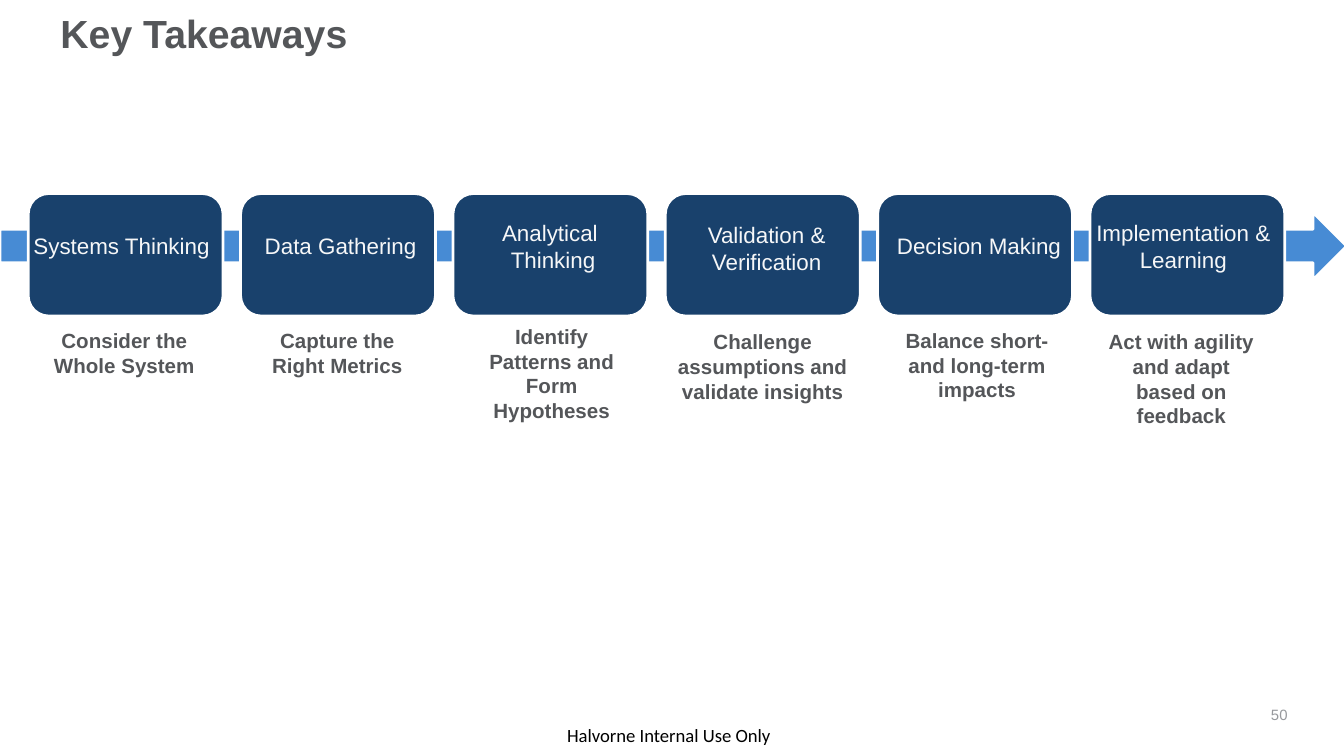
from pptx import Presentation
from pptx import util as u
from pptx.dml.color import RGBColor
from pptx.enum import shapes, text

HUES = {"navy": "19416C", "blue": "478BD4", "white": "FFFFFF", "pale": "F6F7F8",
        "slate": "545659", "grey": "97999D", "black": "000000"}
WIDE = 10
HIGH = WIDE * 9 / 16
COL, ROW = WIDE / 100, HIGH / 100
PITCH, CARD, TALL = 15.8, 14.5, 16.2
STEPS = [
    (["Systems Thinking"], 1, (-1.3, 0), "Consider the Whole System", (-0.1, 16.9, 14.5, 19.2)),
    (["Data Gathering"], 1, (-0.8, 0), "Capture the Right Metrics", (0, 16.9, 14.4, 11.7)),
    (["Analytical ", "Thinking"], 2, (-0.8, 0), "Identify Patterns and Form Hypotheses",
     (0.5, 16.4, 13.7, 18.3)),
    (["Validation & Verification"], 2, (-0.7, 0.3),
     "Challenge assumptions and validate insights", (-0.1, 17.1, 14.7, 18.3)),
    (["Decision Making"], 1, (-0.7, 0), "Balance short- and long-term impacts",
     (-0.4, 16.9, 15.6, 21.5)),
    (["Implementation & Learning"], 2, (-1.3, 0), "Act with agility and adapt based on feedback",
     (-0.2, 17.1, 14, 24.9)),
]


def hue(name):
    return RGBColor.from_string(HUES[name])


def spot(box):
    x, y, w, h = box
    return [u.Inches(n) for n in (x * COL, y * ROW, w * COL, h * ROW)]


def write(slide, box, lines, size=12, color="slate", font="Arial", bold=False,
          align="CENTER", anchor="TOP", pad=(0.1, 0.05), space=None, wrap=True):
    frame = slide.shapes.add_textbox(*spot(box)).text_frame
    frame.word_wrap = wrap
    frame.vertical_anchor = text.MSO_ANCHOR[anchor]
    frame.margin_left = frame.margin_right = u.Inches(pad[0])
    frame.margin_top = frame.margin_bottom = u.Inches(pad[1])
    for i, line in enumerate(lines):
        para = frame.paragraphs[0] if i == 0 else frame.add_paragraph()
        para.alignment = text.PP_ALIGN[align]
        if space:
            para.line_spacing = space
        run = para.add_run()
        run.text = line
        run.font.size, run.font.name, run.font.bold = u.Pt(size), font, bold
        run.font.color.rgb = hue(color)


def block(slide, kind, box, fill):
    shape = slide.shapes.add_shape(kind, *spot(box))
    shape.shadow.inherit = False
    shape.fill.solid()
    shape.fill.fore_color.rgb = hue(fill)
    shape.line.color.rgb = hue("white")
    shape.line.width = u.Pt(1.5)


def head(slide, box):
    write(slide, box, ["Key Takeaways"], size=21, bold=True, align="LEFT",
          pad=(0, 0.05), space=0.9)


def flow(slide, box):
    left, top, wide, high = box
    block(slide, shapes.MSO_SHAPE.RIGHT_ARROW, (left, top + 2.5, wide, 8.9), "blue")
    lefts = [left + 2.1 + PITCH * i for i in range(len(STEPS))]
    for x in lefts:
        block(slide, shapes.MSO_SHAPE.ROUNDED_RECTANGLE, (x, top, CARD, high), "navy")
    for x, (label, rows, (right, down), note, area) in zip(lefts, STEPS):
        deep = 1.8 + 3.55 * rows
        write(slide, (x + right, top + 6.95 + down - deep / 2, 16.5, deep), label, color="pale")
        dx, dy, w, h = area
        write(slide, (x + dx, top + dy, w, h), [note], size=11, bold=True)


def foot(slide, box):
    left, top, wide, high = box
    write(slide, (left + 42.2, top + 3.4, 15.8, 3), ["Halvorne Internal Use Only"], size=10,
          color="black", font="Calibri", align="LEFT", pad=(0, 0), wrap=False)
    write(slide, (left + wide - 6.1, top, 1.9, high), ["50"], size=8, color="grey",
          align="RIGHT", pad=(0, 0.05))


def main():
    deck = Presentation()
    deck.slide_width, deck.slide_height = u.Inches(WIDE), u.Inches(HIGH)
    slide = deck.slides.add_slide(deck.slide_layouts[6])
    foot(slide, (0, 92.4, 100, 4.6))
    head(slide, (4.5, 1.1, 88.7, 10))
    flow(slide, (0, 25.6, 100.2, TALL))
    deck.save("out.pptx")


if __name__ == "__main__":
    main()
